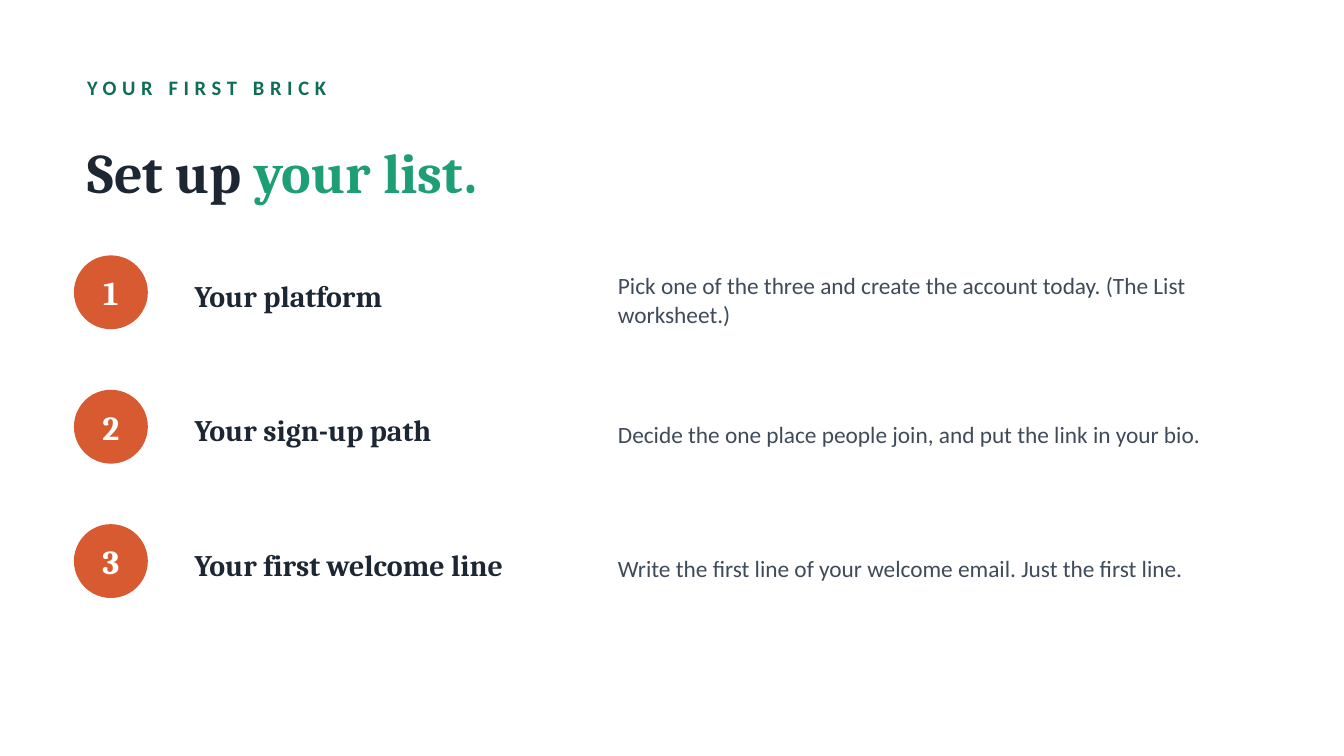
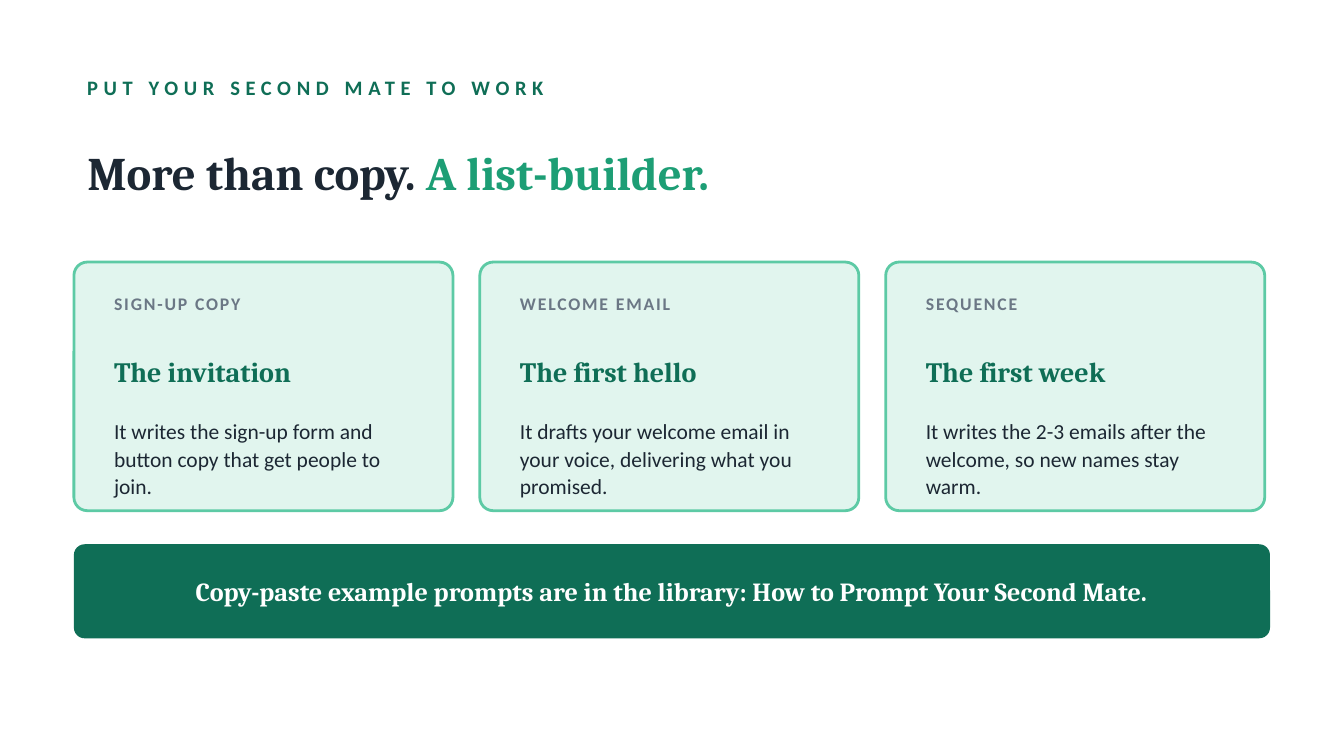
from dataclasses import dataclass
from typing import Any, Optional

import pptx
import pptx.dml.color
import pptx.enum.shapes
import pptx.enum.text
import pptx.util

Inches = pptx.util.Inches
Shapes = pptx.enum.shapes.MSO_SHAPE
Align = pptx.enum.text.PP_ALIGN

SERIF = "Cambria"
SANS = "Calibri"
INK = "1C2733"
SLATE = "3F4B59"
GREY = "6B7785"
PINE = "0F6E56"
GREEN = "1D9E75"
MINT = "5DCAA5"
PALE = "E1F5EE"
ORANGE = "D85A30"
WHITE = "FFFFFF"

MARGIN = 0.55
CONTENT_WIDTH = 8.9


@dataclass(frozen=True)
class Box:
    left: float
    top: float
    width: float
    height: float


@dataclass(frozen=True)
class Style:
    font: str
    size: float
    color: str
    bold: bool = True
    align: Any = Align.LEFT
    tracking: float = 0
    line_spacing: Optional[float] = None


@dataclass(frozen=True)
class Step:
    name: str
    action: str


@dataclass(frozen=True)
class Card:
    label: str
    heading: str
    detail: str


KICKER = Style(SANS, 11, PINE, tracking=3)
STEP_NUMBER = Style(SERIF, 18, WHITE, align=Align.CENTER)
STEP_NAME = Style(SERIF, 16, INK)
STEP_ACTION = Style(SANS, 12.5, SLATE, bold=False, line_spacing=1.05)
CARD_LABEL = Style(SANS, 9.5, GREY, tracking=1)
CARD_HEADING = Style(SERIF, 15, PINE)
CARD_DETAIL = Style(SANS, 11.5, INK, bold=False, line_spacing=1.08)
BANNER = Style(SERIF, 14, WHITE, align=Align.CENTER)

STEPS = [
    Step("Your platform", "Pick one of the three and create the account today. (The List worksheet.)"),
    Step("Your sign-up path", "Decide the one place people join, and put the link in your bio."),
    Step("Your first welcome line", "Write the first line of your welcome email. Just the first line."),
]
STEP_TOP = 1.9
STEP_PITCH = 1.0
BADGE_SIZE = 0.55

CARDS = [
    Card("SIGN-UP COPY", "The invitation", "It writes the sign-up form and button copy that get people to join."),
    Card("WELCOME EMAIL", "The first hello", "It drafts your welcome email in your voice, delivering what you promised."),
    Card("SEQUENCE", "The first week", "It writes the 2-3 emails after the welcome, so new names stay warm."),
]
CARD_TOP = 1.95
CARD_WIDTH = 2.82
CARD_HEIGHT = 1.85
CARD_GAP = 0.2
CARD_PADDING = 0.2
CARD_TEXT_WIDTH = 2.45
CARD_RADIUS = 0.1
BANNER_HEIGHT = 0.7
BANNER_RADIUS = 0.08


def rgb(color: str) -> pptx.dml.color.RGBColor:
    return pptx.dml.color.RGBColor.from_string(color)


def lengths(box: Box) -> tuple:
    return Inches(box.left), Inches(box.top), Inches(box.width), Inches(box.height)


def format_run(run: Any, style: Style, color: Optional[str] = None) -> None:
    run.font.name = style.font
    run.font.size = pptx.util.Pt(style.size)
    run.font.bold = style.bold
    run.font.color.rgb = rgb(color or style.color)
    if style.tracking:
        run._r.get_or_add_rPr().set("spc", str(int(style.tracking * 100)))


def write(frame: Any, text: str, style: Style) -> None:
    frame.word_wrap = True
    frame.auto_size = pptx.enum.text.MSO_AUTO_SIZE.NONE
    frame.vertical_anchor = pptx.enum.text.MSO_ANCHOR.MIDDLE
    frame.text = text
    paragraph = frame.paragraphs[0]
    paragraph.alignment = style.align
    if style.line_spacing:
        paragraph.line_spacing = style.line_spacing
    format_run(paragraph.runs[0], style)


def add_text(slide: Any, box: Box, text: str, style: Style) -> None:
    write(slide.shapes.add_textbox(*lengths(box)).text_frame, text, style)


def add_panel(
    slide: Any, kind: Any, box: Box, fill: str, line: Optional[str] = None, radius: Optional[float] = None
) -> Any:
    panel = slide.shapes.add_shape(kind, *lengths(box))
    panel.shadow.inherit = False
    panel.fill.solid()
    panel.fill.fore_color.rgb = rgb(fill)
    if line:
        panel.line.color.rgb = rgb(line)
        panel.line.width = pptx.util.Pt(1.5)
    else:
        panel.line.fill.background()
    if radius:
        panel.adjustments[0] = radius / min(box.width, box.height)
    return panel


def add_headed_slide(deck: Any, kicker: str, lead: str, accent: str, title_size: float) -> Any:
    slide = deck.slides.add_slide(deck.slide_layouts.get_by_name("Title Only"))
    slide.background.fill.solid()
    slide.background.fill.fore_color.rgb = rgb(WHITE)
    add_text(slide, Box(MARGIN, 0.5, CONTENT_WIDTH, 0.3), kicker, KICKER)
    title = slide.shapes.title
    title.left, title.top, title.width, title.height = lengths(Box(MARGIN, 0.85, CONTENT_WIDTH, 0.85))
    headline = Style(SERIF, title_size, INK)
    write(title.text_frame, lead, headline)
    accent_run = title.text_frame.paragraphs[0].add_run()
    accent_run.text = accent
    format_run(accent_run, headline, GREEN)
    return slide


def add_step(slide: Any, index: int, step: Step) -> None:
    top = STEP_TOP + index * STEP_PITCH
    badge = add_panel(slide, Shapes.OVAL, Box(MARGIN, top, BADGE_SIZE, BADGE_SIZE), ORANGE)
    frame = badge.text_frame
    frame.margin_left = frame.margin_right = frame.margin_top = frame.margin_bottom = Inches(0)
    write(frame, str(index + 1), STEP_NUMBER)
    add_text(slide, Box(1.35, top - 0.05, 3, 0.7), step.name, STEP_NAME)
    add_text(slide, Box(4.5, top - 0.05, 5, 0.75), step.action, STEP_ACTION)


def add_card(slide: Any, index: int, card: Card) -> None:
    left = MARGIN + index * (CARD_WIDTH + CARD_GAP)
    outline = Box(left, CARD_TOP, CARD_WIDTH, CARD_HEIGHT)
    add_panel(slide, Shapes.ROUNDED_RECTANGLE, outline, PALE, MINT, CARD_RADIUS)
    for top, height, text, style in (
        (2.11, 0.3, card.label, CARD_LABEL),
        (2.41, 0.7, card.heading, CARD_HEADING),
        (3.13, 0.55, card.detail, CARD_DETAIL),
    ):
        add_text(slide, Box(left + CARD_PADDING, top, CARD_TEXT_WIDTH, height), text, style)


def build_setup_slide(deck: Any) -> None:
    slide = add_headed_slide(deck, "YOUR FIRST BRICK", "Set up ", "your list.", 30)
    for index, step in enumerate(STEPS):
        add_step(slide, index, step)


def build_second_mate_slide(deck: Any) -> None:
    slide = add_headed_slide(deck, "PUT YOUR SECOND MATE TO WORK", "More than copy. ", "A list-builder.", 25)
    for index, card in enumerate(CARDS):
        add_card(slide, index, card)
    outline = Box(MARGIN, 4.05, CONTENT_WIDTH, BANNER_HEIGHT)
    banner = add_panel(slide, Shapes.ROUNDED_RECTANGLE, outline, PINE, radius=BANNER_RADIUS)
    write(
        banner.text_frame,
        "Copy-paste example prompts are in the library: How to Prompt Your Second Mate.",
        BANNER,
    )


def main() -> None:
    deck = pptx.Presentation()
    deck.slide_width = Inches(10)
    deck.slide_height = Inches(10) * 9 // 16
    build_setup_slide(deck)
    build_second_mate_slide(deck)
    deck.save("out.pptx")


if __name__ == "__main__":
    main()
